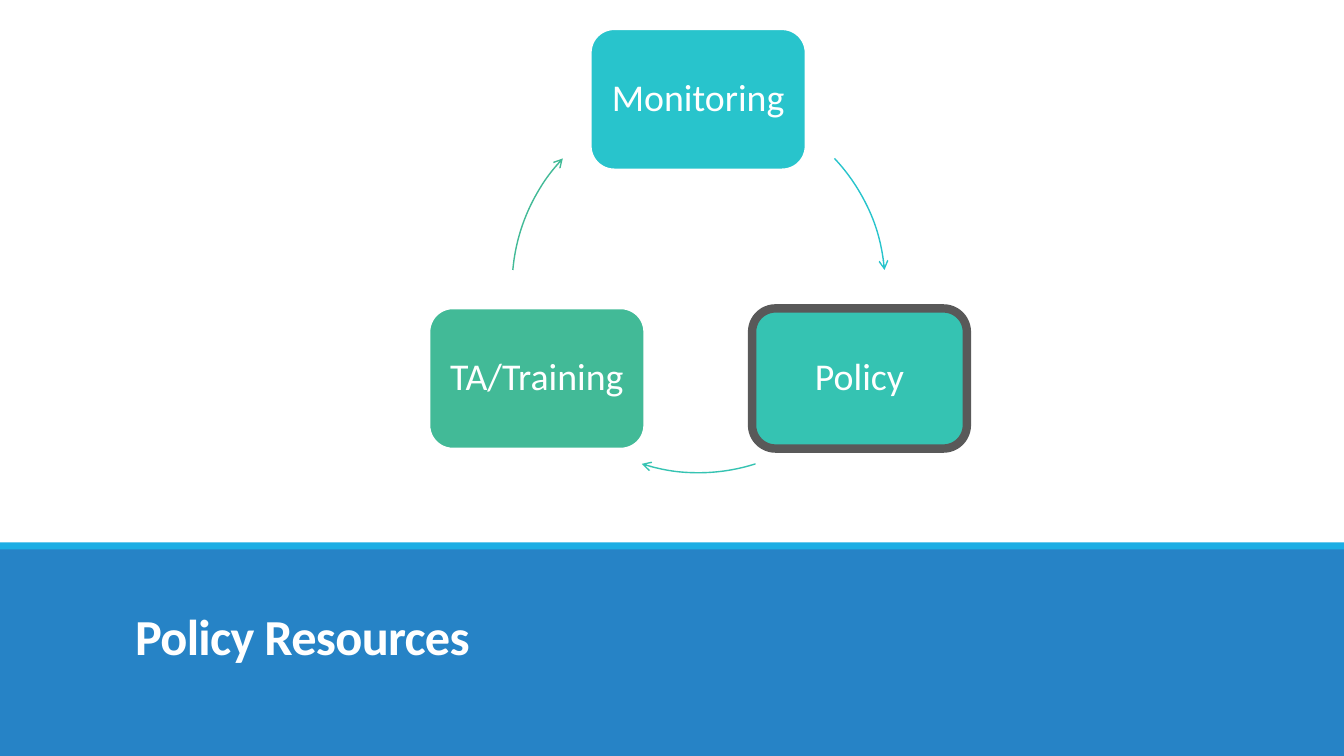
from dataclasses import dataclass

from lxml import etree
from pptx import Presentation
from pptx.dml.color import RGBColor
from pptx.enum.shapes import MSO_SHAPE
from pptx.enum.text import MSO_ANCHOR, MSO_AUTO_SIZE, PP_ALIGN
from pptx.oxml.ns import qn
from pptx.util import Inches, Pt

RECTANGLE = MSO_SHAPE.RECTANGLE
ROUNDED = MSO_SHAPE.ROUNDED_RECTANGLE
ARC = MSO_SHAPE.ARC
MIDDLE = MSO_ANCHOR.MIDDLE
BOTTOM = MSO_ANCHOR.BOTTOM
LEFT = PP_ALIGN.LEFT
CENTER = PP_ALIGN.CENTER
NO_AUTOFIT = MSO_AUTO_SIZE.NONE

COLORS = {
    "white": "FFFFFF",
    "band": "2683C6",
    "stripe": "1CADE4",
    "monitoring": "28C4CC",
    "policy": "35C3B2",
    "training": "42BA97",
    "highlight": "595959",
}
FONT = "Calibri"
SLIDE_WIDTH, SLIDE_HEIGHT = 13.33, 7.5
STEP_WIDTH, STEP_HEIGHT = 2.13, 1.39
STEP_INSET = 0.11
CYCLE_LEFT, CYCLE_TOP, CYCLE_DIAMETER = 5.08, 0.99, 3.7
ARC_UNITS_PER_DEGREE = 0.6


@dataclass(frozen=True)
class Band:
    top: float
    height: float
    color: str


@dataclass(frozen=True)
class Step:
    label: str
    left: float
    top: float
    color: str
    arrow_start: float
    arrow_end: float
    border: str = "white"
    border_width: float = 1.25


BANDS = [Band(5.42, 2.08, "band"), Band(5.38, 0.07, "stripe")]
STEPS = [
    Step("Monitoring", 5.86, 0.29, "monitoring", 316.75, 355),
    Step("Policy", 7.46, 3.06, "policy", 72.25, 107.75, "highlight", 6),
    Step("TA/Training", 4.26, 3.06, "training", 185, 223.25),
]


def rgb(name: str) -> RGBColor:
    return RGBColor.from_string(COLORS[name])


def format_text(frame, size: float, align: PP_ALIGN, spacing: float, bold: bool) -> None:
    paragraph = frame.paragraphs[0]
    paragraph.alignment = align
    paragraph.line_spacing = spacing
    font = paragraph.runs[0].font
    font.name = FONT
    font.size = Pt(size)
    font.bold = bold
    font.color.rgb = rgb("white")


def draw_band(slide, band: Band) -> None:
    strip = slide.shapes.add_shape(
        RECTANGLE, 0, Inches(band.top), Inches(SLIDE_WIDTH), Inches(band.height)
    )
    strip.shadow.inherit = False
    strip.fill.solid()
    strip.fill.fore_color.rgb = rgb(band.color)
    strip.line.fill.background()


def draw_title(slide, heading: str) -> None:
    title = slide.shapes.title
    title.left, title.top = Inches(1.24), Inches(5.71)
    title.width, title.height = Inches(11.06), Inches(0.9)
    frame = title.text_frame
    frame.text = heading
    frame.word_wrap = True
    frame.auto_size = NO_AUTOFIT
    frame.vertical_anchor = BOTTOM
    frame.margin_left = frame.margin_right = Inches(0.1)
    frame.margin_top = frame.margin_bottom = 0
    format_text(frame, 36, LEFT, 0.85, True)
    frame.paragraphs[0].runs[0].font._element.set("spc", "-50")
    title.element.getparent().append(title.element)


def draw_step(slide, step: Step) -> None:
    box = slide.shapes.add_shape(
        ROUNDED, Inches(step.left), Inches(step.top), Inches(STEP_WIDTH), Inches(STEP_HEIGHT)
    )
    box.shadow.inherit = False
    box.fill.solid()
    box.fill.fore_color.rgb = rgb(step.color)
    box.line.color.rgb = rgb(step.border)
    box.line.width = Pt(step.border_width)
    frame = box.text_frame
    frame.text = step.label
    frame.word_wrap = True
    frame.vertical_anchor = MIDDLE
    frame.margin_left = frame.margin_right = Inches(STEP_INSET)
    frame.margin_top = frame.margin_bottom = Inches(STEP_INSET)
    format_text(frame, 27, CENTER, 0.9, False)


def draw_cycle_arrow(slide, step: Step) -> None:
    arrow = slide.shapes.add_shape(
        ARC,
        Inches(CYCLE_LEFT),
        Inches(CYCLE_TOP),
        Inches(CYCLE_DIAMETER),
        Inches(CYCLE_DIAMETER),
    )
    arrow.shadow.inherit = False
    arrow.adjustments[0] = step.arrow_start * ARC_UNITS_PER_DEGREE
    arrow.adjustments[1] = step.arrow_end * ARC_UNITS_PER_DEGREE
    arrow.fill.background()
    arrow.line.color.rgb = rgb(step.color)
    arrow.line.width = Pt(1)
    outline = arrow.element.spPr.find(qn("a:ln"))
    etree.SubElement(outline, qn("a:tailEnd"), type="arrow")


def main() -> None:
    presentation = Presentation()
    presentation.slide_width = Inches(SLIDE_WIDTH)
    presentation.slide_height = Inches(SLIDE_HEIGHT)
    slide = presentation.slides.add_slide(presentation.slide_layouts[5])
    for band in BANDS:
        draw_band(slide, band)
    draw_title(slide, "Policy Resources")
    for step in STEPS:
        draw_step(slide, step)
        draw_cycle_arrow(slide, step)
    presentation.save("out.pptx")


if __name__ == "__main__":
    main()
